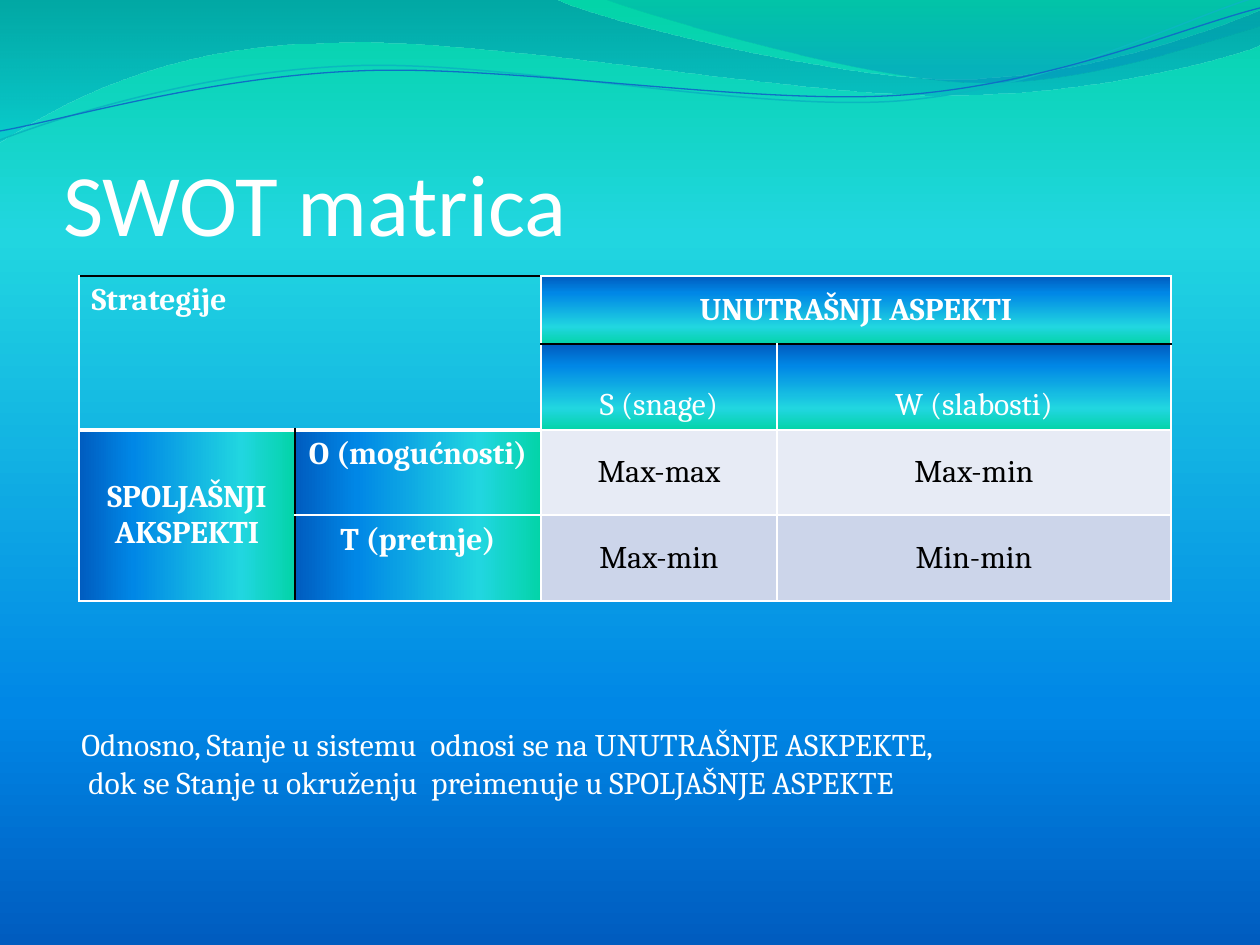
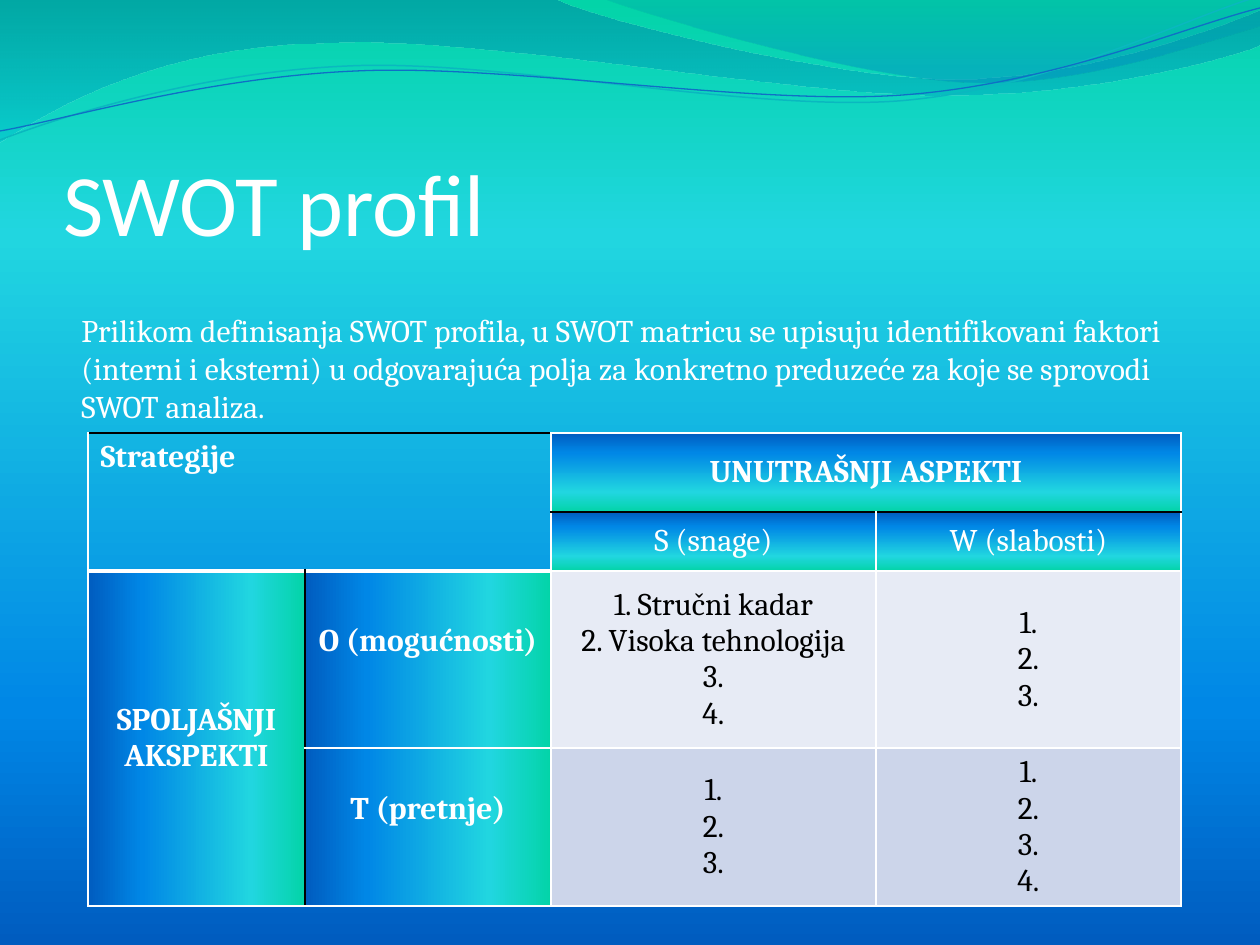
import itertools
import math

import pptx
import pptx.dml.color
import pptx.enum.text
import pptx.oxml
import pptx.oxml.ns
import pptx.util

SCALE = 914400 / 126  # EMU in one px
WIDTH, HEIGHT = 1260, 945
WHITE, BLACK = "FFFFFF", "000000"
LEFT = pptx.enum.text.PP_ALIGN.LEFT
CENTER = pptx.enum.text.PP_ALIGN.CENTER
ANCHOR = pptx.enum.text.MSO_ANCHOR
AUTO_SIZE = pptx.enum.text.MSO_AUTO_SIZE

# Gradient stops: position %, colour, opacity %
OCEAN = [(0, "03D4A8", 100), (25, "21D6E0", 100), (75, "0087E6", 100), (100, "005CBF", 100)]

# Outlines: one point is a straight step, three points are a Bezier step
WAVES = [
    {"start": (0, 0), "stops": [(0, "0074A1", 45), (100, "00C6CF", 55)],
     "steps": [[(554, -1)],
               [(600, 21), (837, 79), (955, 79)],
               [(1075, 79), (1207, 33), (1260, 11)],
               [(1261, 45)],
               [(1239, 55), (1096, 96), (940, 95)],
               [(784, 95), (481, 35), (324, 43)],
               [(163, 45), (58, 105), (-1, 142)],
               [(0, 0)]]},
    {"start": (604, -1), "stops": [(0, "00A1A9", 30), (80, "008BBF", 45)],
     "steps": [[(641, 14), (859, 78), (969, 82)],
               [(1079, 87), (1211, 40), (1260, 26)],
               [(1260, 0)],
               [(604, -1)]]},
    {"start": (0, 140), "line": ("0AB8BF", 0.85), "center": (629, 72), "turn": 357.3,
     "steps": [[(60, 117), (199, 72), (349, 66)],
               [(498, 59), (747, 112), (898, 101)],
               [(1050, 89), (1182, 19), (1257, -3)]]},
    {"start": (0, 131), "line": ("0F6FC6", 0.75), "center": (630, 74), "turn": 357.3,
     "steps": [[(59, 121), (207, 77), (357, 71)],
               [(508, 64), (752, 106), (903, 95)],
               [(1053, 84), (1187, 26), (1260, 8)]]},
]

TITLE_BOX = (63, 97, 1134, 157)
TITLE_FONT = {"name": "Calibri", "size": pptx.util.Pt(50), "bold": False}
TEXT_FONT = {"name": "Cambria", "size": pptx.util.Pt(18)}

# Table zones; an angle turns the ocean gradient, edges differ from thin white
THIN, DARK, THICK = (WHITE, 1), (BLACK, 1), (WHITE, 3)
ZONES = {
    "corner": {"color": WHITE, "bold": True, "edges": {"T": DARK, "B": THICK}},
    "inner": {"color": WHITE, "bold": True, "angle": 270, "edges": {"B": DARK}},
    "factor": {"color": WHITE, "bold": False, "angle": 270, "edges": {"T": DARK}},
    "outer": {"color": WHITE, "bold": True, "angle": 180, "edges": {"R": DARK}},
    "side": {"color": WHITE, "bold": True, "angle": 180, "edges": {"L": DARK}},
    "odd": {"color": BLACK, "bold": False, "fill": "E7EBF5", "edges": {}},
    "even": {"color": BLACK, "bold": False, "fill": "CCD5EA", "edges": {}},
}
ZONE_GRID = [
    ["corner", "corner", "inner", "inner"],
    ["corner", "corner", "factor", "factor"],
    ["outer", "side", "odd", "odd"],
    ["outer", "side", "even", "even"],
]
MERGES = [((0, 0), (1, 1)), ((0, 2), (0, 3)), ((2, 0), (3, 0))]
HEADINGS = {
    (0, 0): ["Strategije"],
    (0, 2): ["UNUTRAŠNJI ASPEKTI"],
    (1, 2): ["S (snage)"],
    (1, 3): ["W (slabosti)"],
    (2, 0): ["SPOLJAŠNJI AKSPEKTI"],
    (2, 1): ["O (mogućnosti)"],
    (3, 1): ["T (pretnje)"],
}
CELL_MARGIN, LINE_HEIGHT = 6, 36

SLIDES = [
    {"title": "SWOT matrica",
     "table": {"at": (79, 276), "columns": [216, 246, 236, 394], "rows": [68, 86, 85, 86],
               "factor_drop": LINE_HEIGHT,
               "body": {(2, 2): ["Max-max"], (2, 3): ["Max-min"],
                        (3, 2): ["Max-min"], (3, 3): ["Min-min"]}},
     "note_box": (69, 719, 1092, 89),
     "note": ["Odnosno, Stanje u sistemu  odnosi se na UNUTRAŠNJE ASKPEKTE,",
              " dok se Stanje u okruženju  preimenuje u SPOLJAŠNJE ASPEKTE"]},
    {"title": "SWOT profil",
     "table": {"at": (88, 433), "columns": [217, 246, 325, 305], "rows": [79, 59, 177, 158],
               "factor_drop": 0,
               "body": {(2, 2): ["1. Stručni kadar", "2. Visoka tehnologija", "3.", "4."],
                        (2, 3): ["1.", "2.", "3."],
                        (3, 2): ["1.", "2.", "3."],
                        (3, 3): ["1.", "2.", "3.", "4."]}},
     "note_box": (69, 305, 1123, 127),
     "note": ["Prilikom definisanja SWOT profila, u SWOT matricu se upisuju identifikovani "
              "faktori (interni i eksterni) u odgovarajuća polja za konkretno preduzeće "
              "za koje se sprovodi SWOT analiza."]},
]


def px(*lengths):
    return [pptx.util.Emu(round(length * SCALE)) for length in lengths]


def rgb(color):
    return pptx.dml.color.RGBColor.from_string(color)


def assign(target, values):
    for name, value in values.items():
        setattr(target, name, value)


def gradient(stops, angle):
    marks = "".join(
        f'<a:gs pos="{position * 1000}"><a:srgbClr val="{color}">'
        f'<a:alpha val="{opacity * 1000}"/></a:srgbClr></a:gs>'
        for position, color, opacity in stops)
    return pptx.oxml.parse_xml(
        f'<a:gradFill {pptx.oxml.ns.nsdecls("a")} rotWithShape="1"><a:gsLst>{marks}</a:gsLst>'
        f'<a:lin ang="{angle * 60000}" scaled="0"/></a:gradFill>')


def swap_gradient(fill, parent, stops, angle):
    """Give a fill more stops, or opacity, than its plain gradient has."""
    fill.gradient()
    plain = parent.find(pptx.oxml.ns.qn("a:gradFill"))
    parent.replace(plain, gradient(stops, angle))


def write(frame, lines, font, color, align):
    for index, line in enumerate(lines):
        para = frame.add_paragraph() if index else frame.paragraphs[0]
        para.alignment = align
        span = para.add_run()
        span.text = line
        assign(span.font, font)
        span.font.color.rgb = rgb(color)


def turn_back(point, wave):
    """Where a point lies before its wave is turned, in EMU."""
    center_x, center_y = wave.get("center", (0, 0))
    angle = math.radians(-wave.get("turn", 0))
    x, y = point[0] - center_x, point[1] - center_y
    return px(center_x + x * math.cos(angle) - y * math.sin(angle),
              center_y + x * math.sin(angle) + y * math.cos(angle))


def bend(shape, steps):
    """Turn the straight segments of three-point steps into Bezier curves."""
    segments = list(shape.element.iter(pptx.oxml.ns.qn("a:lnTo")))
    for segment, step in zip(segments, steps):
        if len(step) == 3:
            points = "".join(f'<a:pt x="{x - shape.left}" y="{y - shape.top}"/>'
                             for x, y in step)
            segment.getparent().replace(segment, pptx.oxml.parse_xml(
                f'<a:cubicBezTo {pptx.oxml.ns.nsdecls("a")}>{points}</a:cubicBezTo>'))


def add_wave(page, wave):
    steps = [[turn_back(point, wave) for point in step] for step in wave["steps"]]
    builder = page.shapes.build_freeform(*turn_back(wave["start"], wave), scale=1.0)
    builder.add_line_segments([step[-1] for step in steps], close="stops" in wave)
    shape = builder.convert_to_shape()
    bend(shape, steps)
    shape.rotation = wave.get("turn", 0)
    shape.shadow.inherit = False
    if "stops" in wave:
        swap_gradient(shape.fill, shape.element.spPr, wave["stops"], 90)
        shape.line.fill.background()
    else:
        color, weight = wave["line"]
        shape.fill.background()
        shape.line.color.rgb = rgb(color)
        shape.line.width = pptx.util.Pt(weight)
    return shape


def dress_master(master, page):
    """Put the background and the waves, drawn on a page first, on the master."""
    fill = master.background.fill
    swap_gradient(fill, master.element.cSld.bg.bgPr, OCEAN, 90)
    tree = master.shapes.element
    for index, wave in enumerate(WAVES):
        shape = add_wave(page, wave)
        shape.element.nvSpPr.cNvPr.set("id", str(100 + index))
        shape.name = f"Wave {index + 1}"
        tree.insert(2 + index, shape.element)


def add_title(page, text):
    title = page.shapes.title
    assign(title, dict(zip(("left", "top", "width", "height"), px(*TITLE_BOX))))
    assign(title.text_frame, {
        "margin_left": 0, "margin_top": px(6)[0], "margin_right": 0, "margin_bottom": 0,
        "vertical_anchor": ANCHOR.BOTTOM, "word_wrap": True, "auto_size": AUTO_SIZE.NONE})
    write(title.text_frame, [text], TITLE_FONT, WHITE, LEFT)


def add_note(page, box, lines):
    frame = page.shapes.add_textbox(*px(*box)).text_frame
    assign(frame, {"word_wrap": True, "auto_size": AUTO_SIZE.SHAPE_TO_FIT_TEXT})
    write(frame, lines, TEXT_FONT, WHITE, LEFT)


def style_cell(cell, zone):
    properties = cell._tc.get_or_add_tcPr()
    for side in "LRTB":
        color, weight = zone["edges"].get(side, THIN)
        properties.append(pptx.oxml.parse_xml(
            f'<a:ln{side} {pptx.oxml.ns.nsdecls("a")} w="{weight * 12700}"><a:solidFill>'
            f'<a:srgbClr val="{color}"/></a:solidFill></a:ln{side}>'))
    if "angle" in zone:
        swap_gradient(cell.fill, properties, OCEAN, zone["angle"])
    elif "fill" in zone:
        cell.fill.solid()
        cell.fill.fore_color.rgb = rgb(zone["fill"])
    else:
        cell.fill.background()


def add_matrix(page, spec):
    columns, rows = spec["columns"], spec["rows"]
    box = px(*spec["at"], sum(columns), sum(rows))
    table = page.shapes.add_table(len(rows), len(columns), *box).table
    assign(table, {"first_row": False, "horz_banding": False})
    for column, width in zip(table.columns, px(*columns)):
        column.width = width
    for row, height in zip(table.rows, px(*rows)):
        row.height = height
    for first, last in MERGES:
        table.cell(*first).merge(table.cell(*last))

    texts = HEADINGS | spec["body"]
    for place in itertools.product(range(len(rows)), range(len(columns))):
        cell = table.cell(*place)
        name = ZONE_GRID[place[0]][place[1]]
        zone = ZONES[name]
        drop = spec["factor_drop"] if name == "factor" else 0
        lift = LINE_HEIGHT if name == "side" else 0
        top, bottom = px(CELL_MARGIN + drop, CELL_MARGIN + lift)
        corner = name == "corner"
        assign(cell, {"margin_top": top, "margin_bottom": bottom,
                      "vertical_anchor": ANCHOR.TOP if corner else ANCHOR.MIDDLE})
        style_cell(cell, zone)
        write(cell.text_frame, texts.get(place, []), TEXT_FONT | {"bold": zone["bold"]},
              zone["color"], LEFT if corner else CENTER)


def main():
    deck = pptx.Presentation()
    deck.slide_width, deck.slide_height = px(WIDTH, HEIGHT)
    title_only = deck.slide_layouts[5]
    for index, content in enumerate(SLIDES):
        page = deck.slides.add_slide(title_only)
        if index == 0:
            dress_master(deck.slide_master, page)
        add_title(page, content["title"])
        add_matrix(page, content["table"])
        add_note(page, content["note_box"], content["note"])
    deck.save("out.pptx")


if __name__ == "__main__":
    main()
